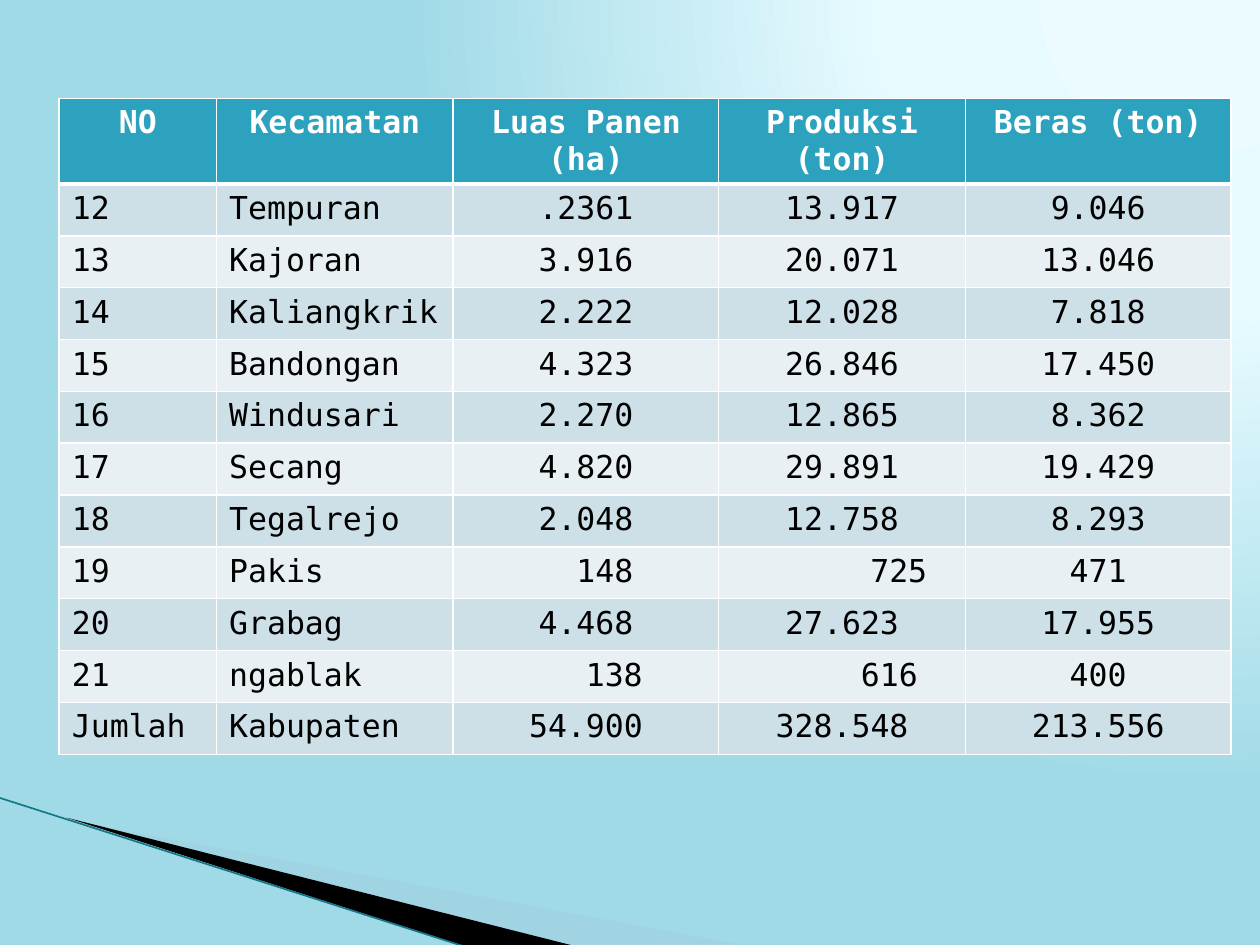
from dataclasses import dataclass

from lxml import etree
from pptx import Presentation
from pptx.dml.color import RGBColor
from pptx.enum import shapes, text
from pptx.oxml import ns, parse_xml
from pptx.util import Inches, Pt

COLORS = {
    "sky_light": "EBFBFF", "sky_pale": "E7FBFF", "sky": "A1DAE7",
    "wedge": "A0CBDC", "black": "000000", "edge": "16778A",
    "white": "FFFFFF", "header": "2DA2BF",
    "band_dark": "CDE0E8", "band_light": "E8F0F4",
}
FONT = "DejaVu Sans Mono"
CHARACTER_WIDTH = 0.15  # inches, for one 18 pt character
CELL_MARGIN = 0.1
TABLE_WIDTH, TABLE_HEIGHT = 9.3, 4.94
COLUMN_SHARES = (1.25, 1.88, 2.11, 1.96, 2.11)
HEADINGS = ("NO", "Kecamatan", "Luas Panen (ha)", "Produksi (ton)", "Beras (ton)")


@dataclass(frozen=True)
class District:
    number: str
    name: str
    area: str
    harvest: str
    rice: str
    area_indent: int = 0  # in characters
    harvest_indent: int = 0

    def values(self) -> tuple:
        return self.number, self.name, self.area, self.harvest, self.rice

    def indents(self) -> tuple:
        return 0, 0, self.area_indent, self.harvest_indent, 0


@dataclass(frozen=True)
class Wedge:
    frame: tuple  # left, top, width, height
    points: tuple
    color: str
    opacity: int = 100


DISTRICTS = (
    District("12", "Tempuran", ".2361", "13.917", "9.046"),
    District("13", "Kajoran", "3.916", "20.071", "13.046"),
    District("14", "Kaliangkrik", "2.222", "12.028", "7.818"),
    District("15", "Bandongan", "4.323", "26.846", "17.450"),
    District("16", "Windusari", "2.270", "12.865", "8.362"),
    District("17", "Secang", "4.820", "29.891", "19.429"),
    District("18", "Tegalrejo", "2.048", "12.758", "8.293"),
    District("19", "Pakis", "148", "725", "471", 2, 6),
    District("20", "Grabag", "4.468", "27.623", "17.955"),
    District("21", "ngablak", "138", "616", "400", 3, 5),
    District("Jumlah", "Kabupaten", "54.900", "328.548", "213.556"),
)
WEDGES = (
    Wedge((0.78, 5.47, 4.16, 1.58),
          ((0.55, 6.51), (5.95, 7.51), (4.56, 7.51)), "wedge", 40),
    Wedge((-0.06, 6.33, 4.16, 0.92),
          ((0.53, 6.49), (4.57, 7.51), (3.72, 7.52)), "black"),
)


def rgb(name: str) -> RGBColor:
    return RGBColor.from_string(COLORS[name])


def paint_background(page) -> None:
    stops = "".join(
        f'<a:gs pos="{position * 1000}"><a:srgbClr val="{COLORS[name]}"/></a:gs>'
        for position, name in ((0, "sky_light"), (40, "sky_pale"), (100, "sky"))
    )
    background = parse_xml(
        f'<p:bg {ns.nsdecls("p", "a")}><p:bgPr><a:gradFill rotWithShape="1">'
        f'<a:gsLst>{stops}</a:gsLst><a:path path="circle">'
        '<a:fillToRect l="95000" t="-106000" r="5000" b="206000"/></a:path>'
        '</a:gradFill><a:effectLst/></p:bgPr></p:bg>'
    )
    page.element.cSld.insert(0, background)


def set_frame(shape, frame: tuple) -> None:
    """Give a freeform another frame while its outline stays in place."""
    left, top, width, height = map(Inches, frame)
    outline = shape.element.spPr.find(".//" + ns.qn("a:path"))
    for point in outline.iter(ns.qn("a:pt")):
        point.set("x", str(int(point.get("x")) + shape.left - left))
        point.set("y", str(int(point.get("y")) + shape.top - top))
    outline.set("w", str(width))
    outline.set("h", str(height))
    shape.left, shape.top, shape.width, shape.height = left, top, width, height


def draw_wedge(page, wedge: Wedge) -> None:
    first, *others = [(Inches(x), Inches(y)) for x, y in wedge.points]
    builder = page.shapes.build_freeform(*first)
    builder.add_line_segments(others, close=True)
    shape = builder.convert_to_shape()
    set_frame(shape, wedge.frame)
    shape.shadow.inherit = False
    shape.line.fill.background()
    shape.fill.solid()
    shape.fill.fore_color.rgb = rgb(wedge.color)
    if wedge.opacity < 100:
        color = shape.element.spPr.find(".//" + ns.qn("a:srgbClr"))
        etree.SubElement(color, ns.qn("a:alpha"), val=str(wedge.opacity * 1000))


def draw_edge(page) -> None:
    edge = page.shapes.add_connector(
        shapes.MSO_CONNECTOR.STRAIGHT,
        Inches(-0.01), Inches(6.33), Inches(3.71), Inches(7.52),
    )
    edge.line.color.rgb = rgb("edge")
    edge.line.width = Pt(0.95)
    etree.SubElement(edge.element.spPr, ns.qn("a:effectLst"))


def set_borders(cell, top: float = 1, bottom: float = 1) -> None:
    properties = cell._tc.get_or_add_tcPr()
    for side, width in (("L", 1), ("R", 1), ("T", top), ("B", bottom)):
        properties.append(parse_xml(
            f'<a:ln{side} {ns.nsdecls("a")} w="{Pt(width)}"><a:solidFill>'
            f'<a:srgbClr val="{COLORS["white"]}"/></a:solidFill></a:ln{side}>'
        ))


def write_cell(cell, words: str, *, fill: str, color: str = "black",
               bold: bool = False, centered: bool = True, indent: int = 0) -> None:
    cell.fill.solid()
    cell.fill.fore_color.rgb = rgb(fill)
    cell.margin_left = Inches(CELL_MARGIN + indent * CHARACTER_WIDTH)
    para = cell.text_frame.paragraphs[0]
    para.alignment = text.PP_ALIGN.CENTER if centered else text.PP_ALIGN.LEFT
    span = para.add_run()
    span.text = words
    span.font.name = FONT
    span.font.size = Pt(18)
    span.font.bold = bold
    span.font.color.rgb = rgb(color)


def draw_table(page) -> None:
    row_count = len(DISTRICTS) + 1
    table = page.shapes.add_table(
        row_count, len(HEADINGS), Inches(0.47), Inches(0.78),
        Inches(TABLE_WIDTH), Inches(TABLE_HEIGHT),
    ).table
    for column, share in zip(table.columns, COLUMN_SHARES):
        column.width = Inches(TABLE_WIDTH * share / sum(COLUMN_SHARES))
    for row in table.rows:
        row.height = Inches(TABLE_HEIGHT / row_count)
    for column, heading in enumerate(HEADINGS):
        cell = table.cell(0, column)
        set_borders(cell, bottom=3)
        write_cell(cell, heading, fill="header", color="white", bold=True)
    for row, district in enumerate(DISTRICTS, start=1):
        band = "band_dark" if row % 2 else "band_light"
        for column, (value, indent) in enumerate(
                zip(district.values(), district.indents())):
            cell = table.cell(row, column)
            set_borders(cell, top=3 if row == 1 else 1)
            write_cell(cell, value, fill=band, centered=column > 1, indent=indent)


def main() -> None:
    deck = Presentation()
    deck.slide_width, deck.slide_height = Inches(10), Inches(7.5)
    page = deck.slides.add_slide(deck.slide_layouts[6])
    paint_background(page)
    for wedge in WEDGES:
        draw_wedge(page, wedge)
    draw_edge(page)
    draw_table(page)
    deck.save("out.pptx")


if __name__ == "__main__":
    main()
